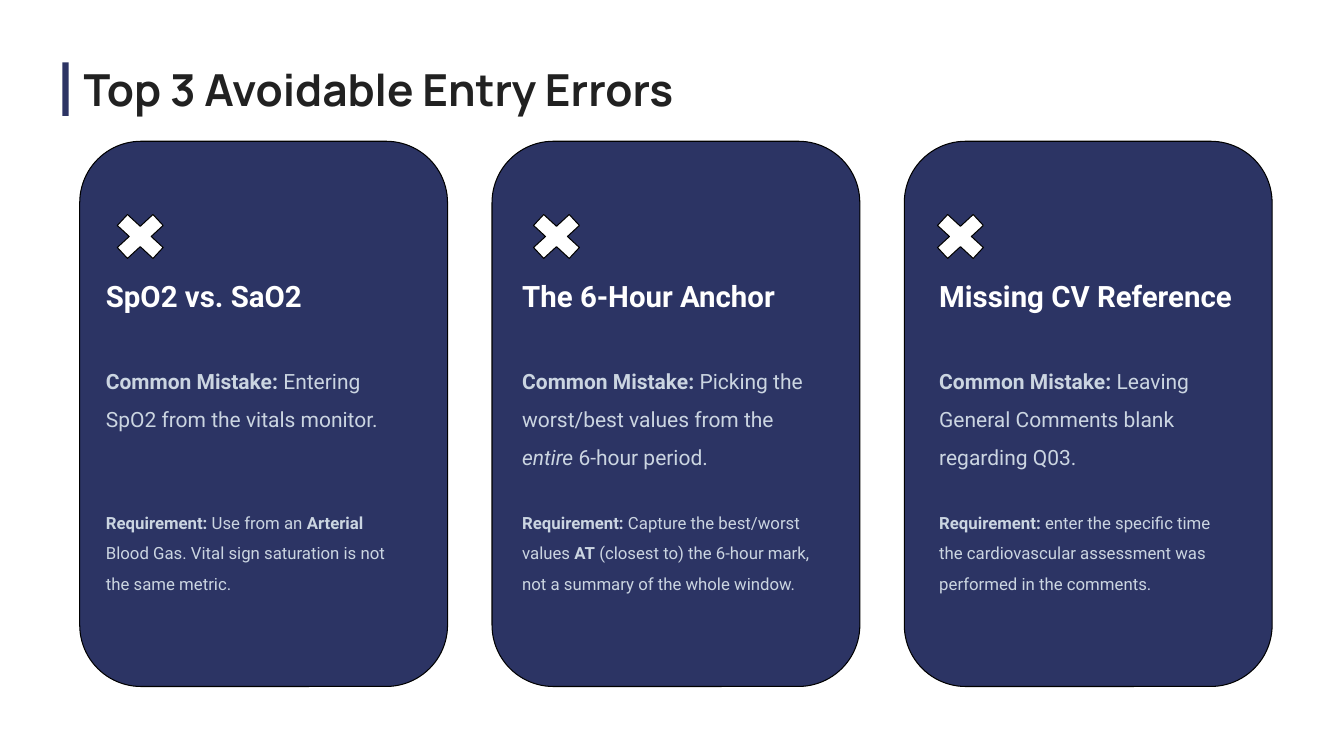
import pptx
import pptx.util
from pptx.dml.color import RGBColor
from pptx.enum.shapes import MSO_SHAPE
from pptx.enum.text import MSO_ANCHOR, MSO_AUTO_SIZE, PP_ALIGN

Cm = pptx.util.Cm
Pt = pptx.util.Pt

NAVY = RGBColor(0x2C, 0x34, 0x64)
INK = RGBColor(0x21, 0x21, 0x21)
MIST = RGBColor(0xCB, 0xD5, 0xE1)
WHITE = RGBColor(0xFF, 0xFF, 0xFF)
BLACK = RGBColor(0, 0, 0)

TITLE = "Top 3 Avoidable Entry Errors"
CARDS = [
    {
        "heading": "SpO2 vs. SaO2",
        "mistake": [("Common Mistake:", "b"), (" Entering SpO2 from the vitals monitor.", "")],
        "requirement": [
            ("Requirement:", "b"), (" Use from an ", ""), ("Arterial", "b"),
            (" Blood Gas. Vital sign saturation is not the same metric.", ""),
        ],
        "text_left": 2.67,
        "cross_left": 2.67,
    },
    {
        "heading": "The 6-Hour Anchor",
        "mistake": [
            ("Common Mistake:", "b"), (" Picking the worst/best values from the ", ""),
            ("entire", "i"), (" 6-hour period.", ""),
        ],
        "requirement": [
            ("Requirement:", "b"), (" Capture the best/worst values ", ""), ("AT", "b"),
            (" (closest to) the 6-hour mark, not a summary of the whole window.", ""),
        ],
        "text_left": 13.16,
        "cross_left": 13.16,
    },
    {
        "heading": "Missing CV Reference",
        "mistake": [
            ("Common Mistake:", "b"), (" Leaving General Comments blank regarding Q03.", ""),
        ],
        "requirement": [
            ("Requirement:", "b"),
            (" enter the specific time the cardiovascular assessment was performed"
             " in the comments.", ""),
        ],
        "text_left": 23.67,
        "cross_left": 23.34,
    },
]
CARD_LEFT, CARD_PITCH = 2.01, 10.39


def write_text(box, spans, *, size, color, font="Roboto", spacing=1.0):
    frame = box.text_frame
    frame.word_wrap = True
    frame.auto_size = MSO_AUTO_SIZE.NONE
    frame.vertical_anchor = MSO_ANCHOR.TOP
    frame.margin_left = frame.margin_top = frame.margin_right = frame.margin_bottom = 0
    para = frame.paragraphs[0]
    para.alignment = PP_ALIGN.LEFT
    para.line_spacing = spacing
    for text, style in spans:
        span = para.add_run()
        span.text = text
        span.font.name = font
        span.font.size = Pt(size)
        span.font.color.rgb = color
        span.font.bold = style == "b"
        span.font.italic = style == "i"


def add_block(page, kind, left, top, width, height, fill, outlined=True):
    block = page.shapes.add_shape(kind, Cm(left), Cm(top), Cm(width), Cm(height))
    block.shadow.inherit = False
    block.fill.solid()
    block.fill.fore_color.rgb = fill
    if outlined:
        block.line.color.rgb = BLACK
        block.line.width = Pt(0.75)
    else:
        block.line.fill.background()
    return block


def add_text(page, left, top, width, height, spans, **style):
    box = page.shapes.add_textbox(Cm(left), Cm(top), Cm(width), Cm(height))
    write_text(box, spans, **style)


def add_card(page, index, card):
    panel = add_block(page, MSO_SHAPE.ROUNDED_RECTANGLE,
                      CARD_LEFT + index * CARD_PITCH, 3.56, 9.27, 13.74, NAVY)
    panel.adjustments[0] = 0.167
    cross = add_block(page, MSO_SHAPE.MATH_MULTIPLY, card["cross_left"], 5.16, 1.73, 1.6, WHITE)
    cross.adjustments[0] = 0.235
    left = card["text_left"]
    add_text(page, left, 7.01, 7.9, 0.89, [(card["heading"], "b")], size=21, color=WHITE)
    add_text(page, left, 8.97, 7.54, 2.57, card["mistake"], size=15, color=MIST, spacing=1.5)
    add_text(page, left, 12.67, 7.54, 2.06, card["requirement"], size=12, color=MIST, spacing=1.5)


def main():
    deck = pptx.Presentation()
    deck.slide_width, deck.slide_height = Cm(33.87), Cm(19.05)
    page = deck.slides.add_slide(deck.slide_layouts[5])
    title = page.shapes.title
    title.left, title.top, title.width, title.height = Cm(2.11), Cm(1.57), Cm(31.67), Cm(1.35)
    write_text(title, [(TITLE, "b")], size=31.5, color=INK, font="Manrope")
    add_block(page, MSO_SHAPE.RECTANGLE, 1.57, 1.57, 0.16, 1.35, NAVY, outlined=False)
    for index, card in enumerate(CARDS):
        add_card(page, index, card)
    deck.save("out.pptx")


if __name__ == "__main__":
    main()
